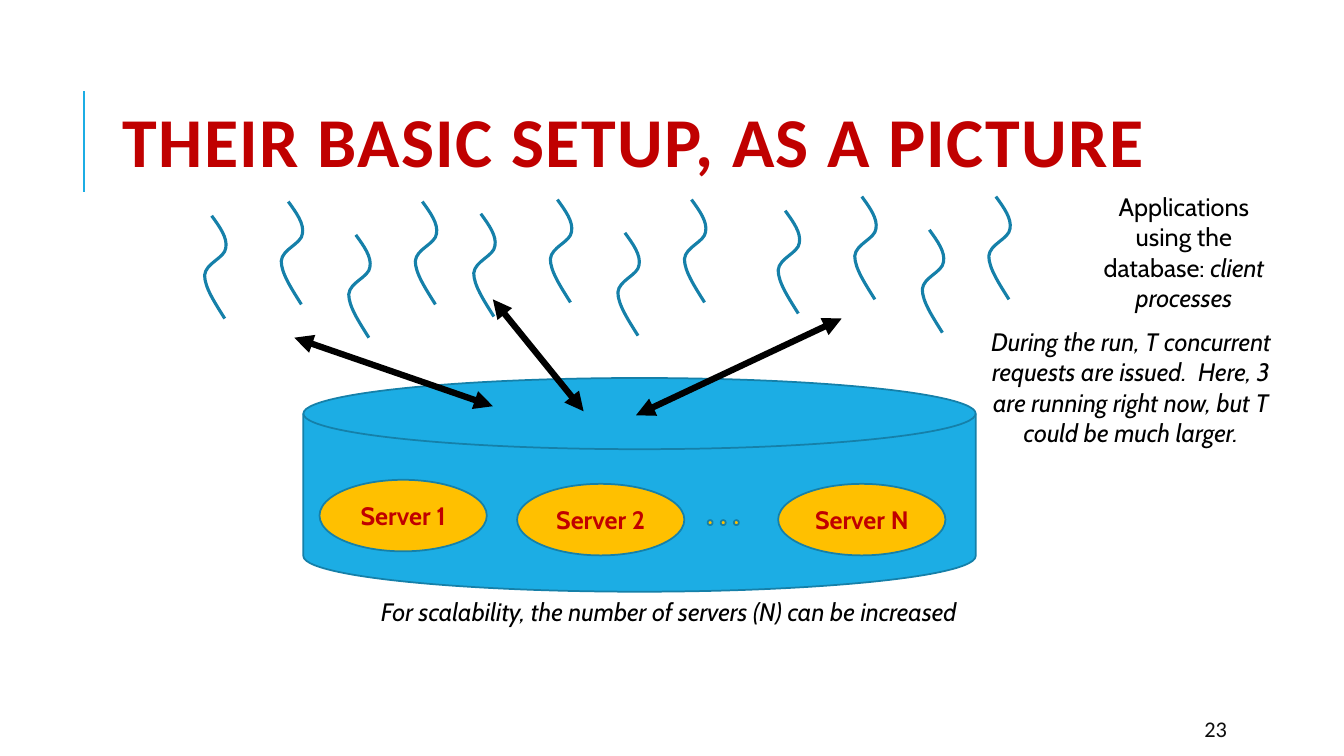
from pptx import Presentation, util as u
from pptx.dml.color import RGBColor
from pptx.enum import shapes, text
from pptx.oxml import ns, xmlchemy as x

SCALE = 9144
RED = RGBColor(0xC0, 0x00, 0x00)
BLUE = RGBColor(0x1C, 0xAD, 0xE4)
DARK_BLUE = RGBColor(0x15, 0x80, 0xA9)
GOLD = RGBColor(0xFF, 0xC0, 0x00)
BLACK = RGBColor(0x00, 0x00, 0x00)
NEAR_BLACK = RGBColor(0x0D, 0x0D, 0x0D)

WAVE_LEFT = -7
WAVE_CURVES = [
    [(8, 11), (16, 22), (14, 32)],
    [(13, 42), (-6, 47), (-7, 59)],
    [(-7, 71), (3, 86), (13, 102)],
]
CLIENT_GROUPS = [(210, 214), (477, 212), (779, 209)]
CLIENT_OFFSETS = [(0, 0), (76, -14), (143, 19), (209, -14)]
SERVERS = [("Server 1", 317, 476), ("Server 2", 513, 480), ("Server N", 772, 480)]
REQUESTS = [
    ((292, 335), (489, 403)),
    ((835, 316), (631, 412)),
    ((489, 297), (579, 408)),
]


def px(*values):
    return [u.Emu(value * SCALE) for value in values]


class Diagram:
    """Draws styled elements on the current slide, with lengths in px of 1/100 inch."""

    def __init__(self, slide):
        self.slide = slide
        self.font = "Cabin"
        self.heading_font = "Calibri"
        self.size = 18
        self.outline = 1.25

    def format_run(self, run, size, font, color, bold=False, italic=False):
        run.font.size = u.Pt(size)
        run.font.name = font
        run.font.color.rgb = color
        run.font.bold = bold
        run.font.italic = italic

    def title(self, wording, box):
        shape = self.slide.shapes.title
        shape.left, shape.top, shape.width, shape.height = px(*box)
        frame = shape.text_frame
        frame.text = wording
        frame.auto_size = text.MSO_AUTO_SIZE.NONE
        frame.vertical_anchor = text.MSO_ANCHOR.MIDDLE
        paragraph = frame.paragraphs[0]
        paragraph.alignment = text.PP_ALIGN.LEFT
        paragraph.line_spacing = 0.8
        self.format_run(paragraph.runs[0], 50, self.heading_font, RED, bold=True)
        for properties in shape.element.iter(ns.qn("a:rPr")):
            properties.set("spc", "100")

    def note(self, box, plain="", emphasis=""):
        frame = self.slide.shapes.add_textbox(*px(*box)).text_frame
        frame.word_wrap = True
        frame.auto_size = text.MSO_AUTO_SIZE.SHAPE_TO_FIT_TEXT
        paragraph = frame.paragraphs[0]
        paragraph.alignment = text.PP_ALIGN.CENTER
        for wording, italic in ((plain, False), (emphasis, True)):
            if wording:
                run = paragraph.add_run()
                run.text = wording
                self.format_run(run, self.size, self.font, BLACK, italic=italic)

    def page_number(self, number, box):
        frame = self.slide.shapes.add_textbox(*px(*box)).text_frame
        frame.word_wrap = True
        frame.vertical_anchor = text.MSO_ANCHOR.MIDDLE
        frame.text = number
        self.format_run(frame.paragraphs[0].runs[0], 16, self.heading_font, NEAR_BLACK)

    def shape(self, kind, box, fill, label=""):
        shape = self.slide.shapes.add_shape(kind, *px(*box))
        shape.shadow.inherit = False
        shape.fill.solid()
        shape.fill.fore_color.rgb = fill
        shape.line.color.rgb = DARK_BLUE
        shape.line.width = u.Pt(self.outline)
        if label:
            frame = shape.text_frame
            frame.text = label
            frame.vertical_anchor = text.MSO_ANCHOR.MIDDLE
            frame.paragraphs[0].alignment = text.PP_ALIGN.CENTER
            self.format_run(frame.paragraphs[0].runs[0], self.size, self.font, RED, bold=True)

    def client(self, left, top):
        ends = [curve[-1] for curve in WAVE_CURVES]
        builder = self.slide.shapes.build_freeform(left, top, scale=SCALE)
        builder.add_line_segments([(left + dx, top + dy) for dx, dy in ends], close=False)
        wave = builder.convert_to_shape()
        wave.shadow.inherit = False
        wave.fill.background()
        wave.line.color.rgb = DARK_BLUE
        wave.line.width = u.Pt(2.25)
        segments = list(wave.element.iter(ns.qn("a:lnTo")))
        for segment, curve in zip(segments, WAVE_CURVES):
            bend = x.OxmlElement("a:cubicBezTo")
            for dx, dy in curve:
                point = x.OxmlElement("a:pt")
                point.set("x", str(dx - WAVE_LEFT))
                point.set("y", str(dy))
                bend.append(point)
            segment.getparent().replace(segment, bend)

    def line(self, start, end, color, width, arrows=False):
        connector = self.slide.shapes.add_connector(
            shapes.MSO_CONNECTOR.STRAIGHT, *px(*start, *end)
        )
        connector.line.color.rgb = color
        connector.line.width = u.Pt(width)
        properties = connector.element.spPr
        if arrows:
            outline = properties.find(ns.qn("a:ln"))
            for tag in ("a:headEnd", "a:tailEnd"):
                arrowhead = x.OxmlElement(tag)
                arrowhead.set("type", "triangle")
                outline.append(arrowhead)
        properties.append(x.OxmlElement("a:effectLst"))


def main():
    presentation = Presentation()
    presentation.slide_width = u.Emu(12192000)
    presentation.slide_height = u.Emu(6858000)
    slide = presentation.slides.add_slide(presentation.slide_layouts[5])
    diagram = Diagram(slide)
    ellipse = shapes.MSO_SHAPE.OVAL

    diagram.line((83, 190), (83, 90), BLUE, 1.5)
    diagram.title("THEIR BASIC SETUP, AS A PICTURE", (112, 64, 1063, 164))
    diagram.page_number("23", (1185, 708, 106, 30))
    diagram.shape(shapes.MSO_SHAPE.FLOWCHART_MAGNETIC_DISK, (301, 375, 667, 212), BLUE)
    for left, top in CLIENT_GROUPS:
        for dx, dy in CLIENT_OFFSETS:
            diagram.client(left + dx, top + dy)
    diagram.note(
        (325, 587, 677, 40),
        emphasis="For scalability, the number of servers (N) can be increased",
    )
    for label, left, top in SERVERS:
        diagram.shape(ellipse, (left, top, 166, 71), GOLD, label)
    for index in range(3):
        diagram.shape(ellipse, (702 + 13 * index, 516, 5, 5), GOLD)
    diagram.note(
        (1072, 185, 205, 101),
        plain="Applications using the database: ",
        emphasis="client processes",
    )
    diagram.note(
        (968, 319, 308, 131),
        emphasis="During the run, T concurrent requests are issued.  Here, 3 are running "
        "right now, but T could be much larger.",
    )
    for start, end in REQUESTS:
        diagram.line(start, end, BLACK, 4.5, arrows=True)
    presentation.save("out.pptx")


if __name__ == "__main__":
    main()
